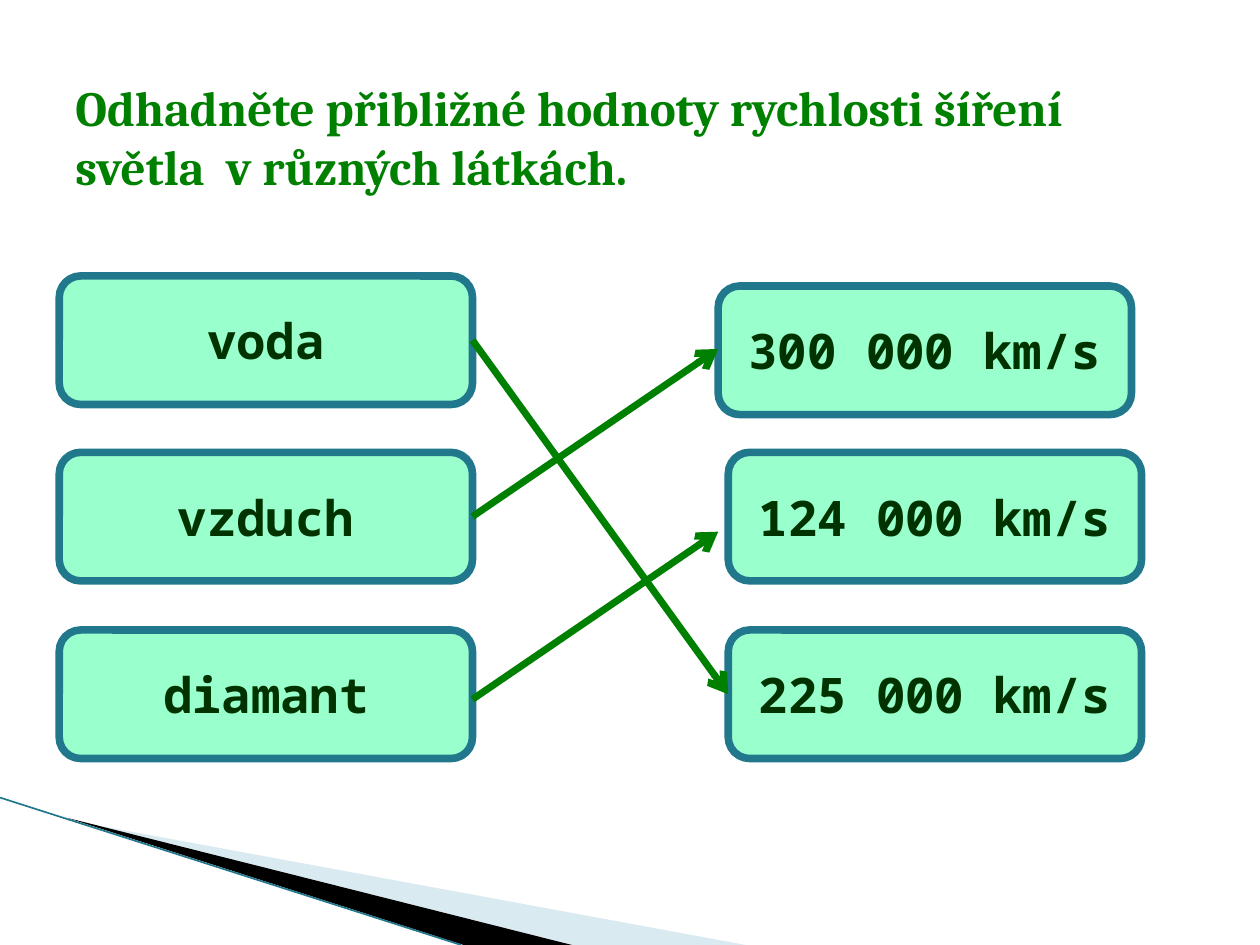
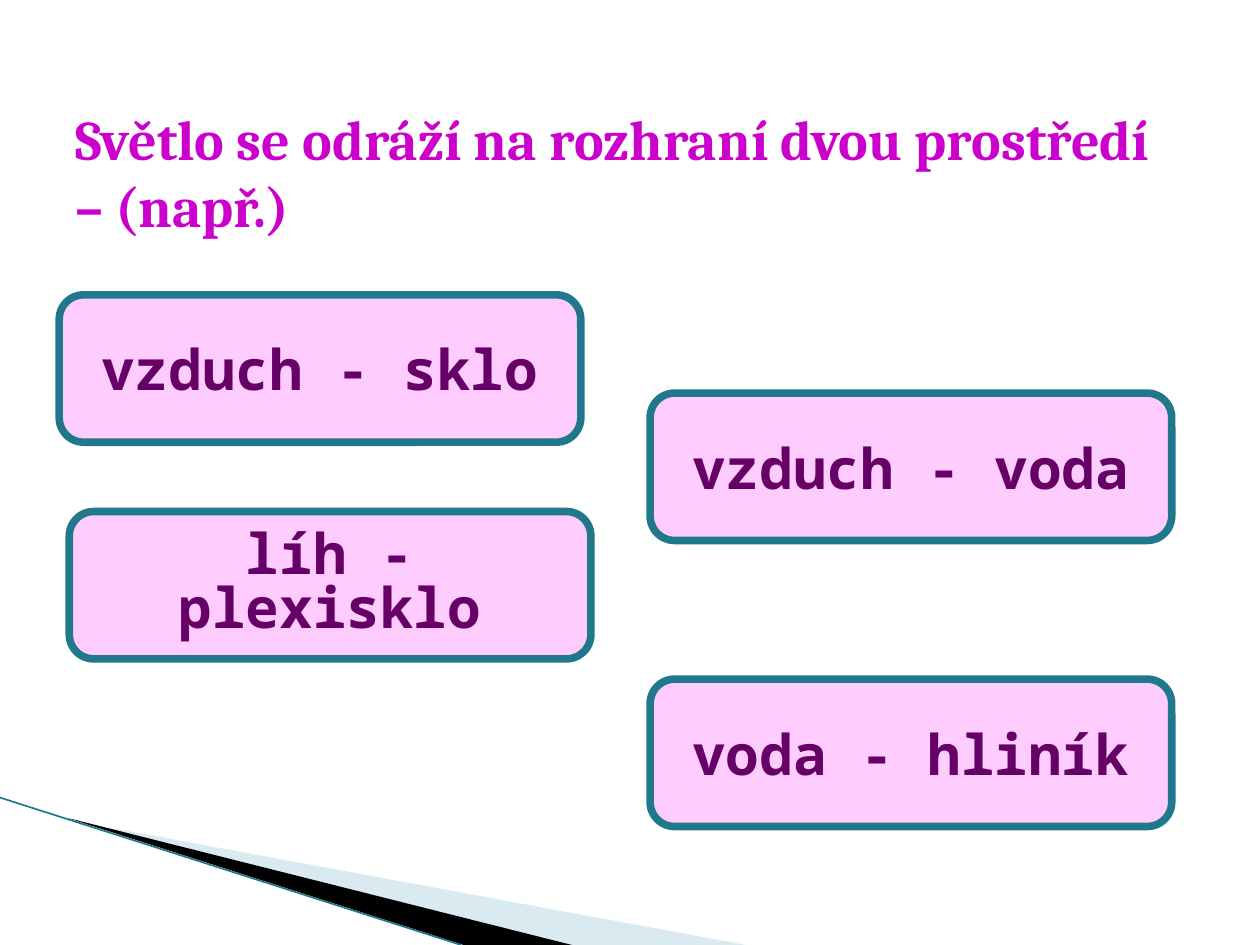
from lxml.etree import SubElement
from pptx import Presentation
from pptx.dml.color import RGBColor
from pptx.enum.shapes import MSO_CONNECTOR, MSO_SHAPE
from pptx.enum.text import MSO_ANCHOR, PP_ALIGN
from pptx.oxml.ns import qn
from pptx.util import Inches, Pt

TITLE_FONT = "Cambria"
CARD_FONT = "Noto Sans Mono"
TEAL = "21788D"
PALE_BLUE = "A0CBDC"
BLACK = "000000"
GREEN = "008000"
MINT = "99FFCC"
DARK_GREEN = "003300"
MAGENTA = "CC00CC"
PINK = "FFCCFF"
PURPLE = "660066"


def color(hex_string):
    return RGBColor.from_string(hex_string)


def add_text(shape, text, font_name, size, text_color):
    """Fill the shape with one bold, vertically centred paragraph."""
    frame = shape.text_frame
    frame.word_wrap = True
    frame.vertical_anchor = MSO_ANCHOR.MIDDLE
    paragraph = frame.paragraphs[0]
    run = paragraph.add_run()
    run.text = text
    run.font.name = font_name
    run.font.size = Pt(size)
    run.font.bold = True
    run.font.color.rgb = color(text_color)
    return paragraph


def add_line(slide, start, end, line_color, width, arrow=False):
    points = [Inches(value) for value in (*start, *end)]
    connector = slide.shapes.add_connector(MSO_CONNECTOR.STRAIGHT, *points)
    connector.line.color.rgb = color(line_color)
    connector.line.width = Pt(width)
    if arrow:
        line = connector.line._get_or_add_ln()
        SubElement(line, qn("a:tailEnd"), type="arrow")
    SubElement(connector._element.spPr, qn("a:effectLst"))


def add_wedge(slide, points, fill_color, opacity=100):
    (left, top), *others = points
    builder = slide.shapes.build_freeform(Inches(left), Inches(top))
    builder.add_line_segments([(Inches(x), Inches(y)) for x, y in others])
    wedge = builder.convert_to_shape()
    wedge.shadow.inherit = False
    wedge.fill.solid()
    wedge.fill.fore_color.rgb = color(fill_color)
    wedge.line.fill.background()
    if opacity < 100:
        fill = wedge._element.spPr.find(qn("a:solidFill"))
        SubElement(fill[0], qn("a:alpha"), val=str(opacity * 1000))


def add_slide(presentation, title, title_height, size, title_color):
    """Add a blank slide with the corner wedges and a title."""
    slide = presentation.slides.add_slide(presentation.slide_layouts[6])
    add_wedge(slide, [(0.55, 6.51), (5.92, 7.5), (4.54, 7.5)], PALE_BLUE, 40)
    add_wedge(slide, [(0.53, 6.49), (4.54, 7.5), (3.68, 7.5)], BLACK)
    add_line(slide, (0, 6.33), (3.66, 7.5), TEAL, 0.95)
    box = slide.shapes.add_textbox(
        Inches(0.5), Inches(0.3), Inches(9), Inches(title_height))
    add_text(box, title, TITLE_FONT, size, title_color)
    return slide


def add_cards(slide, cards, card_size, font_size, fill_color, text_color):
    """Add a rounded card for each (text, left, top); return paragraphs by text."""
    width, height = card_size
    labels = {}
    for text, left, top in cards:
        card = slide.shapes.add_shape(
            MSO_SHAPE.ROUNDED_RECTANGLE,
            Inches(left), Inches(top), Inches(width), Inches(height))
        card.shadow.inherit = False
        card.fill.solid()
        card.fill.fore_color.rgb = color(fill_color)
        card.line.color.rgb = color(TEAL)
        card.line.width = Pt(4.33)
        paragraph = add_text(card, text, CARD_FONT, font_size, text_color)
        paragraph.alignment = PP_ALIGN.CENTER
        labels[text] = paragraph
    return labels


def add_speed_slide(presentation):
    slide = add_slide(
        presentation,
        "Odhadněte přibližné hodnoty rychlosti šíření světla  v různých látkách.",
        1.57, 28, GREEN)
    substances = [("voda", 0.47, 2.19), ("vzduch", 0.47, 3.59),
                  ("diamant", 0.47, 5)]
    speeds = [("300 000 km/s", 5.7, 2.27), ("124 000 km/s", 5.78, 3.59),
              ("225 000 km/s", 5.78, 5)]
    add_cards(slide, substances + speeds, (3.28, 1.02), 28, MINT, DARK_GREEN)
    answers = [((3.75, 4.1), (5.7, 2.77)), ((3.75, 5.55), (5.7, 4.22)),
               ((3.75, 2.7), (5.78, 5.51))]
    for start, end in answers:
        add_line(slide, start, end, GREEN, 4, arrow=True)


def add_reflection_slide(presentation):
    slide = add_slide(
        presentation, "Světlo se odráží na rozhraní dvou prostředí – (např.)",
        2.12, 32, MAGENTA)
    two_line_label = "líh - plexisklo"
    interfaces = [("vzduch - sklo", 0.47, 2.34), (two_line_label, 0.55, 4.06),
                  ("vzduch - voda", 5.16, 3.12), ("voda - hliník", 5.16, 5.39)]
    labels = add_cards(slide, interfaces, (4.14, 1.17), 32, PINK, PURPLE)
    # Tighter lines keep the wrapped label inside its border.
    labels[two_line_label].line_spacing = 0.8


def main():
    presentation = Presentation()
    presentation.slide_width = Inches(10)
    presentation.slide_height = Inches(7.5)
    add_speed_slide(presentation)
    add_reflection_slide(presentation)
    presentation.save("out.pptx")


if __name__ == "__main__":
    main()
